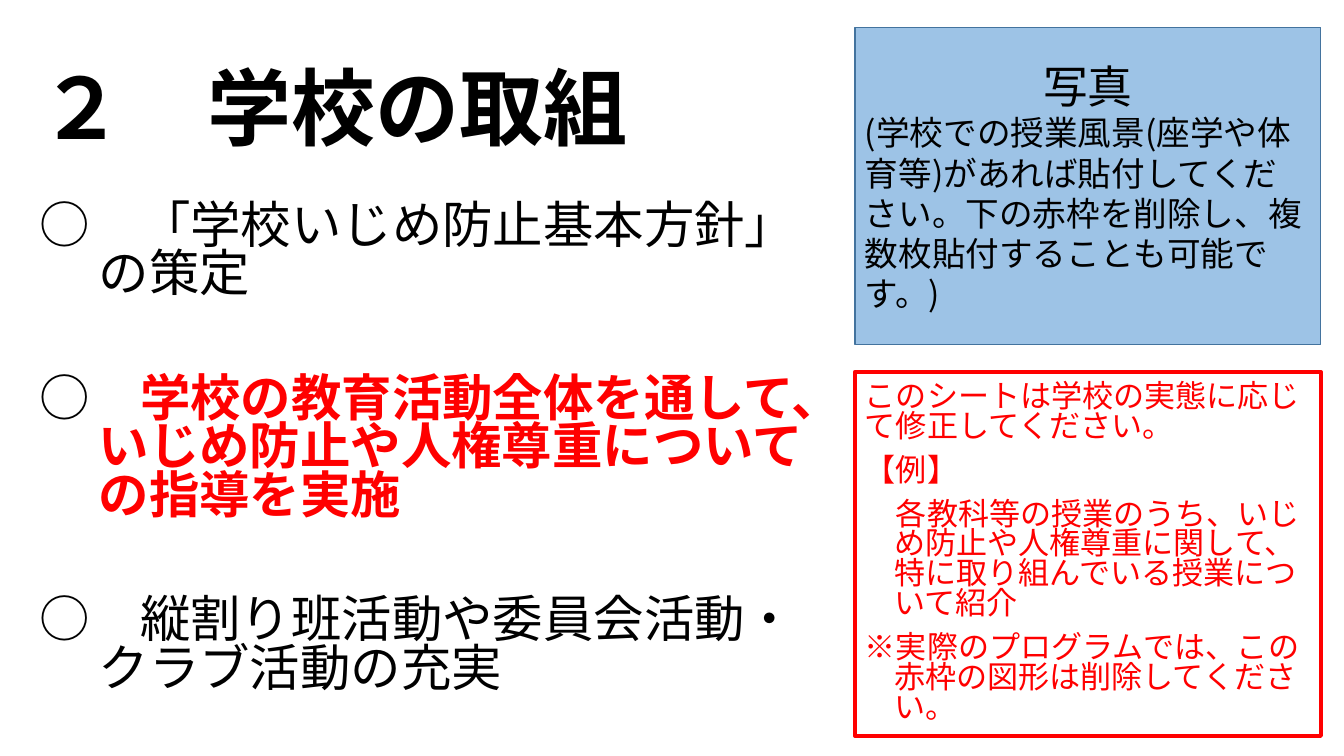
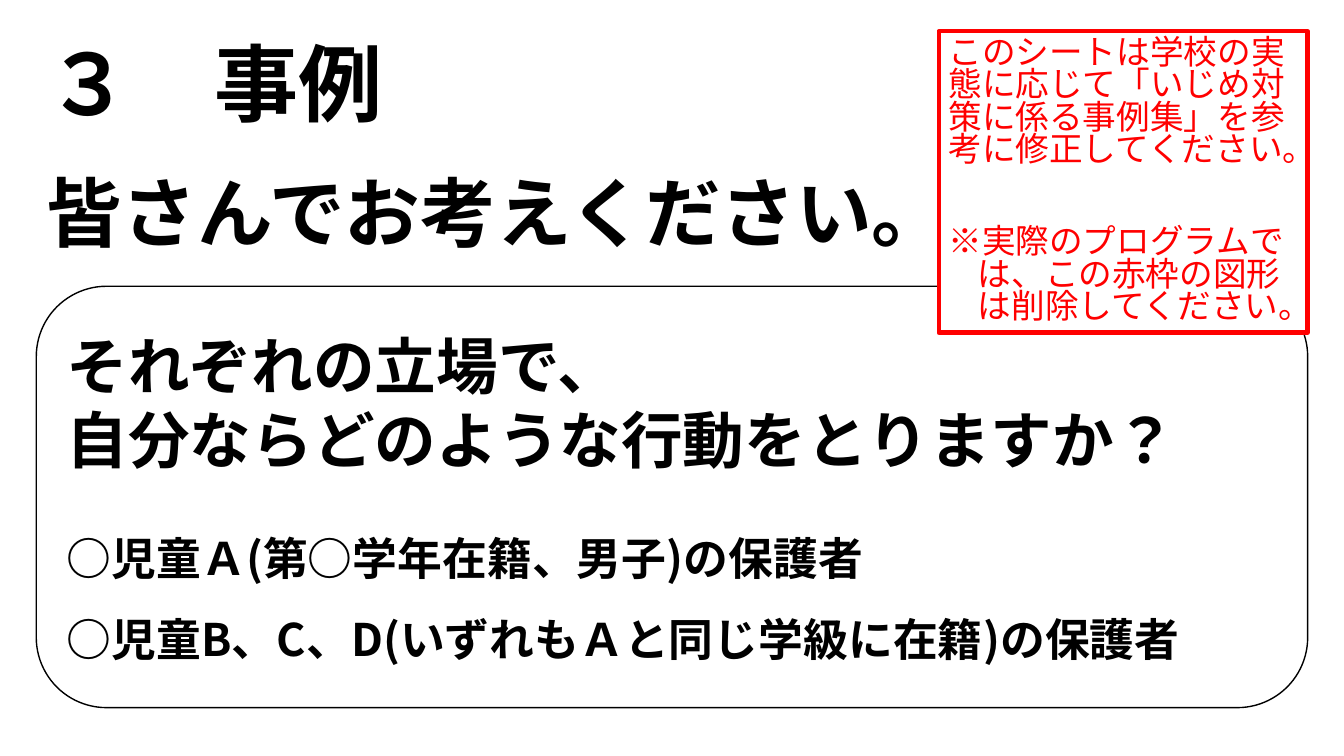
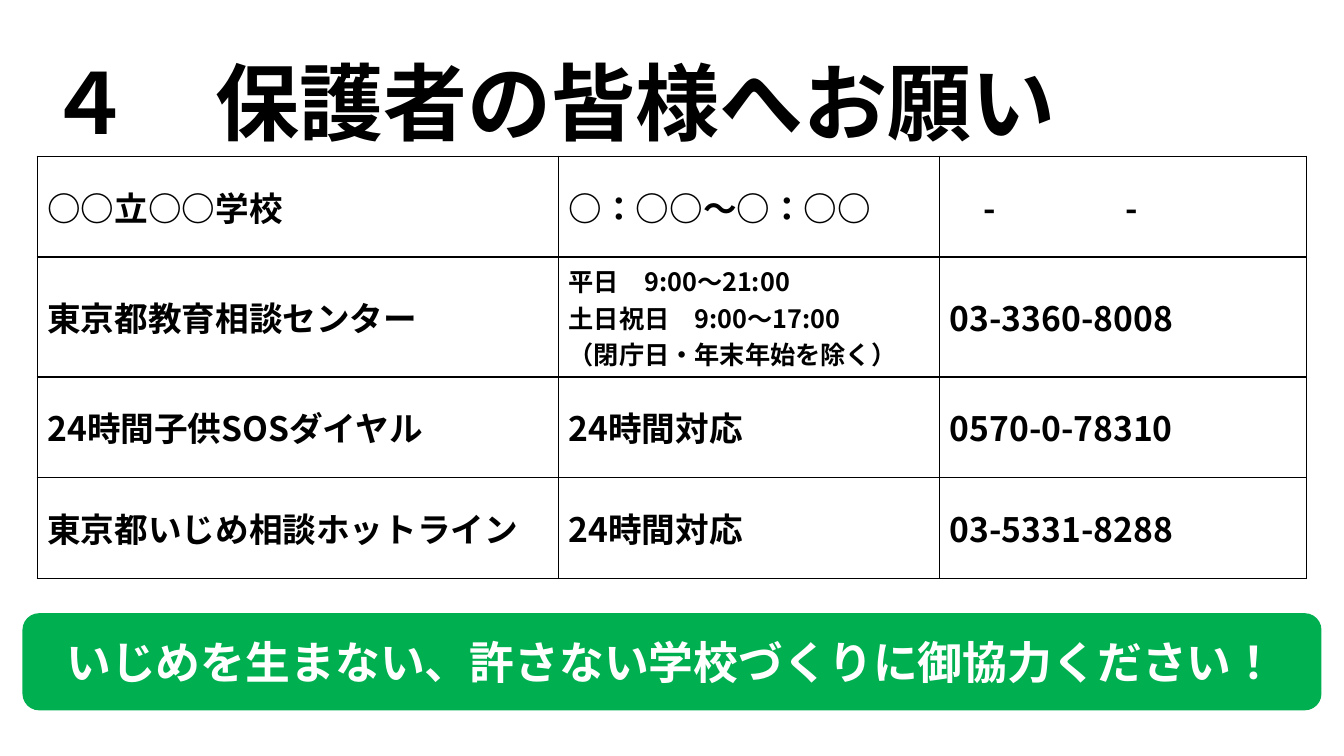
from dataclasses import dataclass
from typing import Optional

from lxml import etree
from pptx import Presentation
from pptx import util as u
from pptx.dml import color as dml
from pptx.enum import lang as el, shapes as es, text as et
from pptx.oxml import ns

PX = 9144  # EMU per px, 100 px to the inch


# Theme: colours, fonts and type sizes
@dataclass(frozen=True)
class Theme:
    ink: str = "000000"
    paper: str = "FFFFFF"
    red: str = "FF0000"
    blue: str = "9DC3E6"
    edge: str = "43739E"
    green: str = "00B050"
    sans: str = "Noto Sans CJK JP"
    latin: str = "Arial"
    title: float = 60
    lead: float = 54
    ask: float = 44
    list: float = 36
    label: float = 32
    text: float = 24
    note: float = 22.2
    small: float = 18


T = Theme()


@dataclass(frozen=True)
class Box:
    x: int
    y: int
    w: int
    h: int

    def emu(self) -> list[u.Emu]:
        return [u.Emu(v * PX) for v in (self.x, self.y, self.w, self.h)]


@dataclass(frozen=True)
class Para:
    text: str
    size: float
    color: str = T.ink
    bold: bool = False
    font: str = T.sans
    line: Optional[float] = None
    before: float = 0
    hang: int = 0
    center: bool = False
    strong: str = ""  # bold red ending
    tab: int = 0


@dataclass(frozen=True)
class Look:
    kind: es.MSO_SHAPE = es.MSO_SHAPE.RECTANGLE
    fill: Optional[str] = None
    edge: Optional[str] = None
    width: float = 1
    middle: bool = True


@dataclass(frozen=True)
class Row:
    high: int
    cells: list[list[Para]]


def rgb(code: str) -> dml.RGBColor:
    return dml.RGBColor.from_string(code)


# Text
def style(run, para: Para, color: str, bold: bool) -> None:
    font = run.font
    font.size, font.bold, font.name = u.Pt(para.size), bold, para.font
    font.language_id = el.MSO_LANGUAGE_ID.JAPANESE
    font.color.rgb = rgb(color)
    east = etree.SubElement(run._r.get_or_add_rPr(), ns.qn("a:ea"))
    east.set("typeface", T.sans)


def write(frame, paras: list[Para]) -> None:
    frame.word_wrap = True
    frame.text = "\n".join(p.text for p in paras)
    for item, para in zip(frame.paragraphs, paras):
        item.alignment = et.PP_ALIGN.CENTER if para.center else et.PP_ALIGN.LEFT
        item.line_spacing = para.line
        item.space_before = u.Pt(para.before)
        props = item._p.get_or_add_pPr()
        if para.hang:
            props.set("marL", str(para.hang * PX))
            props.set("indent", str(-para.hang * PX))
        if para.tab:
            stops = etree.SubElement(props, ns.qn("a:tabLst"))
            etree.SubElement(stops, ns.qn("a:tab"), pos=str(para.tab * PX), algn="l")
        for run in item.runs:
            style(run, para, para.color, para.bold)
        if para.strong:
            run = item.add_run()
            run.text = para.strong
            style(run, para, T.red, True)


def label(slide, box: Box, paras: list[Para], middle: bool = False) -> None:
    frame = slide.shapes.add_textbox(*box.emu()).text_frame
    write(frame, paras)
    frame.vertical_anchor = et.MSO_ANCHOR.MIDDLE if middle else et.MSO_ANCHOR.TOP


def title(slide, box: Box, words: str) -> None:
    label(slide, box, [Para(words, T.title, bold=True, line=0.9)], middle=True)


# Shapes
def panel(slide, box: Box, look: Look, paras: list[Para]) -> None:
    shape = slide.shapes.add_shape(look.kind, *box.emu())
    shape.shadow.inherit = False
    if look.fill:
        shape.fill.solid()
        shape.fill.fore_color.rgb = rgb(look.fill)
    else:
        shape.fill.background()
    if look.edge:
        shape.line.color.rgb = rgb(look.edge)
        shape.line.width = u.Pt(look.width)
    else:
        shape.line.fill.background()
    write(shape.text_frame, paras)
    anchor = et.MSO_ANCHOR
    shape.text_frame.vertical_anchor = anchor.MIDDLE if look.middle else anchor.TOP


def note(words: str, size: float, hang: int = 0, before: float = 10) -> Para:
    return Para(words, size, T.red, font=T.latin, line=0.8, before=before, hang=hang)


ERASE = "※実際のプログラムでは、この赤枠の図形は削除してください。"


# Table
def border(cell) -> None:
    props = cell._tc.get_or_add_tcPr()
    for at, side in enumerate(("lnL", "lnR", "lnT", "lnB")):
        line = etree.Element(ns.qn(f"a:{side}"), w=str(u.Pt(1)))
        fill = etree.SubElement(line, ns.qn("a:solidFill"))
        etree.SubElement(fill, ns.qn("a:srgbClr"), val=T.ink)
        props.insert(at, line)


def grid(slide, x: int, y: int, cols: list[int], rows: list[Row]) -> None:
    box = Box(x, y, sum(cols), sum(row.high for row in rows))
    table = slide.shapes.add_table(len(rows), len(cols), *box.emu()).table
    table.first_row = table.horz_banding = False
    for col, wide in zip(table.columns, cols):
        col.width = u.Emu(wide * PX)
    for r, row in enumerate(rows):
        table.rows[r].height = u.Emu(row.high * PX)
        for c, paras in enumerate(row.cells):
            cell = table.cell(r, c)
            cell.fill.background()
            border(cell)
            cell.vertical_anchor = et.MSO_ANCHOR.MIDDLE
            write(cell.text_frame, paras)


# Slides
def effort(slide) -> None:
    title(slide, Box(29, 39, 1150, 145), "２　学校の取組")

    def point(words: str, strong: str = "", before: float = 54.5) -> Para:
        return Para(words, T.list, line=0.8, before=before, hang=59, strong=strong)

    label(slide, Box(29, 198, 781, 533), [
        point("○　「学校いじめ防止基本方針」の策定", before=10),
        point("○　", "学校の教育活動全体を通して、いじめ防止や人権尊重についての指導を実施"),
        point("○　縦割り班活動や委員会活動・クラブ活動の充実"),
    ])
    panel(slide, Box(848, 27, 462, 315), Look(fill=T.blue, edge=T.edge), [
        Para("写真", T.label, center=True),
        Para("(学校での授業風景(座学や体育等)があれば貼付してください。"
             "下の赤枠を削除し、複数枚貼付することも可能です。)", T.text),
    ])
    panel(slide, Box(848, 369, 462, 361), Look(edge=T.red, width=3), [
        note("このシートは学校の実態に応じて修正してください。", T.note),
        note("【例】", T.note),
        note("　各教科等の授業のうち、いじめ防止や人権尊重に関して、"
             "特に取り組んでいる授業について紹介", T.note, 29),
        note(ERASE, T.note, 29),
    ])


def case(slide) -> None:
    title(slide, Box(36, 15, 1150, 145), "３　事例")
    panel(slide, Box(36, 160, 1261, 101), Look(fill=T.paper, middle=False),
          [Para("皆さんでお考えください。", T.lead, bold=True)])
    frame = Look(es.MSO_SHAPE.ROUNDED_RECTANGLE, T.paper, T.ink)
    panel(slide, Box(36, 284, 1261, 418), frame, [
        Para("それぞれの立場で、", T.ask, bold=True),
        Para("自分ならどのような行動をとりますか？", T.ask, bold=True),
        Para("○児童Ａ(第○学年在籍、男子)の保護者", T.label,
             bold=True, line=1.5, before=20),
        Para("○児童B、C、D(いずれもＡと同じ学級に在籍)の保護者", T.label,
             bold=True, line=1.5),
    ])
    panel(slide, Box(931, 31, 366, 299), Look(fill=T.paper, edge=T.red, width=3), [
        note("このシートは学校の実態に応じて「いじめ対策に係る事例集」を"
             "参考に修正してください。", T.text),
        note(ERASE, T.text, 29, before=43),
    ])


def appeal(slide) -> None:
    title(slide, Box(37, 62, 1222, 89), "４　保護者の皆様へお願い")

    def cell(*lines: str, size: float = T.text, tab: int = 0) -> list[Para]:
        return [Para(s, size, bold=True, tab=tab) for s in lines]

    high, tall = 100, 119  # the tall row holds three lines
    allday = "24時間対応"
    grid(slide, 37, 155, [517, 378, 364], [
        Row(high, [cell("○○立○○学校"), cell("○：○○～○：○○"),
                   cell("　-\t-", tab=174)]),
        Row(tall, [cell("東京都教育相談センター"),
                   cell("平日　9:00～21:00", "土日祝日　9:00～17:00",
                        "（閉庁日・年末年始を除く）", size=T.small),
                   cell("03-3360-8008")]),
        Row(high, [cell("24時間子供SOSダイヤル"), cell(allday),
                   cell("0570-0-78310")]),
        Row(high, [cell("東京都いじめ相談ホットライン"), cell(allday),
                   cell("03-5331-8288")]),
    ])
    banner = Look(es.MSO_SHAPE.ROUNDED_RECTANGLE, T.green, T.green)
    panel(slide, Box(23, 609, 1287, 95), banner, [
        Para("いじめを生まない、許さない学校づくりに御協力ください！",
             T.label, T.paper, bold=True, center=True),
    ])


def main() -> None:
    deck = Presentation()
    deck.slide_width, deck.slide_height = u.Emu(1333 * PX), u.Emu(750 * PX)
    for draw in (effort, case, appeal):
        draw(deck.slides.add_slide(deck.slide_layouts[6]))
    deck.save("out.pptx")


if __name__ == "__main__":
    main()
